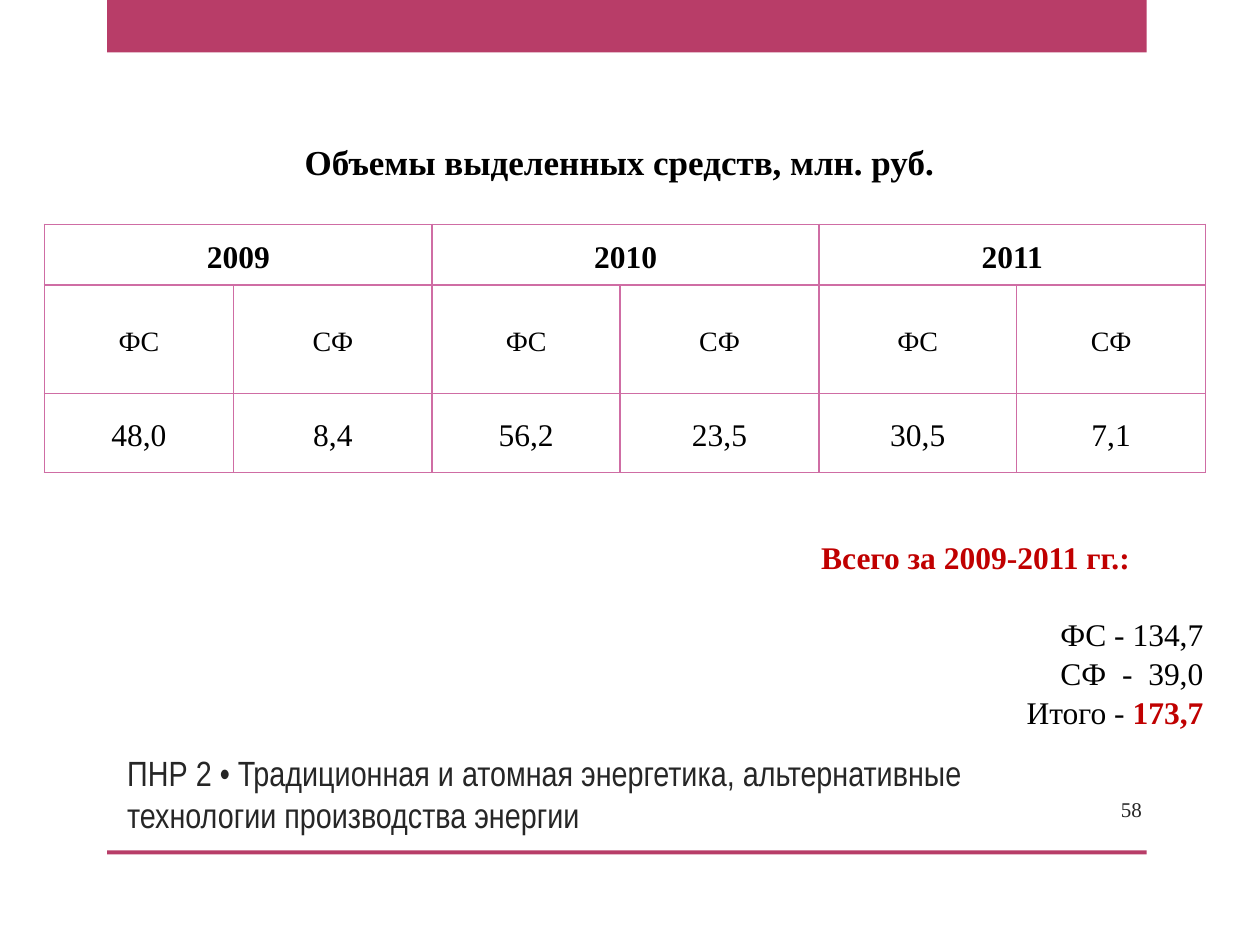
import pptx
import pptx.dml.color
import pptx.enum.shapes
import pptx.enum.text
import pptx.oxml
import pptx.oxml.ns
import pptx.util

Pt = pptx.util.Pt
ALIGN = pptx.enum.text.PP_ALIGN
ANCHOR = pptx.enum.text.MSO_ANCHOR

COLORS = {
    "bar": "B83D68",
    "border": "CF6DA4",
    "black": "000000",
    "gray": "262626",
    "red": "C00000",
}
SERIF = "Times New Roman"

YEARS = ["2009", "2010", "2011"]
SOURCES = ["ФС", "СФ"]
AMOUNTS = ["48,0", "8,4", "56,2", "23,5", "30,5", "7,1"]
COLUMN_WIDTHS = [108, 113.6, 107.4, 113.6, 113, 108]
ROW_HEIGHTS = [34.8, 62, 45]


def set_all(target, values):
    for name, value in values.items():
        setattr(target, name, value)


def rgb(color):
    return pptx.dml.color.RGBColor.from_string(COLORS[color])


def add_run(paragraph, text, size, color="black", bold=False, name=SERIF):
    run = paragraph.add_run()
    run.text = text
    set_all(run.font, {"size": Pt(size), "bold": bold, "name": name})
    run.font.color.rgb = rgb(color)


def add_bar(slide, top, height):
    bar = slide.shapes.add_shape(
        pptx.enum.shapes.MSO_SHAPE.RECTANGLE, Pt(61.2), Pt(top), Pt(594), Pt(height))
    bar.shadow.inherit = False
    bar.fill.solid()
    bar.fill.fore_color.rgb = rgb("bar")
    bar.line.fill.background()


def add_text_box(slide, left, top, width, height, anchor=ANCHOR.TOP):
    frame = slide.shapes.add_textbox(Pt(left), Pt(top), Pt(width), Pt(height)).text_frame
    set_all(frame, {"word_wrap": True, "vertical_anchor": anchor})
    return frame


def set_title(slide, text):
    title = slide.shapes.title
    set_all(title, {"left": Pt(65.5), "top": Pt(428.4), "width": Pt(572.4), "height": Pt(52.6)})
    frame = title.text_frame
    set_all(frame, {"word_wrap": True, "vertical_anchor": ANCHOR.BOTTOM,
                    "auto_size": pptx.enum.text.MSO_AUTO_SIZE.NONE})
    frame.paragraphs[0].alignment = ALIGN.LEFT
    add_run(frame.paragraphs[0], text, 20, "gray", name="Arial Narrow")


def set_borders(cell):
    properties = cell._tc.get_or_add_tcPr()
    for position, side in enumerate(("lnL", "lnR", "lnT", "lnB")):
        properties.insert(position, pptx.oxml.parse_xml(
            f'<a:{side} {pptx.oxml.ns.nsdecls("a")} w="{Pt(1)}"><a:solidFill>'
            f'<a:srgbClr val="{COLORS["border"]}"/></a:solidFill></a:{side}>'))


def write_cell(cell, text, size, bold=False, space_after=0):
    set_all(cell, {"vertical_anchor": ANCHOR.MIDDLE, "margin_left": Pt(5),
                   "margin_right": Pt(5), "margin_top": 0, "margin_bottom": 0})
    paragraph = cell.text_frame.paragraphs[0]
    set_all(paragraph, {"alignment": ALIGN.CENTER, "line_spacing": 1.15,
                        "space_after": Pt(space_after)})
    add_run(paragraph, text, size, bold=bold)


def add_funding_table(slide):
    table = slide.shapes.add_table(
        len(ROW_HEIGHTS), len(COLUMN_WIDTHS), Pt(25.4), Pt(128.2),
        Pt(sum(COLUMN_WIDTHS)), Pt(sum(ROW_HEIGHTS))).table
    set_all(table, {"first_row": False, "horz_banding": False})
    for column, width in zip(table.columns, COLUMN_WIDTHS):
        column.width = Pt(width)
    for row, height in zip(table.rows, ROW_HEIGHTS):
        row.height = Pt(height)
    for cell in table.iter_cells():
        cell.fill.background()
        set_borders(cell)

    # Each year spans its two funding sources
    for index, year in enumerate(YEARS):
        header = table.cell(0, 2 * index)
        header.merge(table.cell(0, 2 * index + 1))
        write_cell(header, year, 18, bold=True)
    for column, amount in enumerate(AMOUNTS):
        write_cell(table.cell(1, column), SOURCES[column % 2], 16)
        write_cell(table.cell(2, column), amount, 18, space_after=10)


def add_totals(slide):
    frame = add_text_box(slide, 462.2, 303.8, 232.6, 94.3)
    heading = frame.paragraphs[0]
    heading.alignment = ALIGN.LEFT
    add_run(heading, "Всего за 2009-2011 гг.:", 18, "red", bold=True)
    for text, gap in [("ФС - 134,7", 22.5), ("СФ  -  39,0", 0.7), ("Итого - ", 0.7)]:
        line = frame.add_paragraph()
        set_all(line, {"alignment": ALIGN.RIGHT, "space_before": Pt(gap)})
        add_run(line, text, 18)
    add_run(line, "173,7", 18, "red", bold=True)


def main():
    presentation = pptx.Presentation()
    set_all(presentation, {"slide_width": Pt(720), "slide_height": Pt(540)})
    slide = presentation.slides.add_slide(presentation.slide_layouts[5])

    # Frame: top band and bottom rule
    add_bar(slide, 0, 30)
    add_bar(slide, 486, 2.2)

    # Title and page number
    set_title(slide, "ПНР 2 • Традиционная и атомная энергетика, "
                     "альтернативные технологии производства энергии")
    page = add_text_box(slide, 599.8, 447.8, 59.8, 28.8, ANCHOR.MIDDLE).paragraphs[0]
    page.alignment = ALIGN.RIGHT
    add_run(page, "58", 12, "gray")

    # Funding table with its caption and totals
    add_funding_table(slide)
    add_totals(slide)
    caption = add_text_box(slide, 167, 77, 402.5, 31.7).paragraphs[0]
    add_run(caption, "Объемы выделенных средств, млн. руб.", 20, bold=True)

    presentation.save("out.pptx")


if __name__ == "__main__":
    main()
